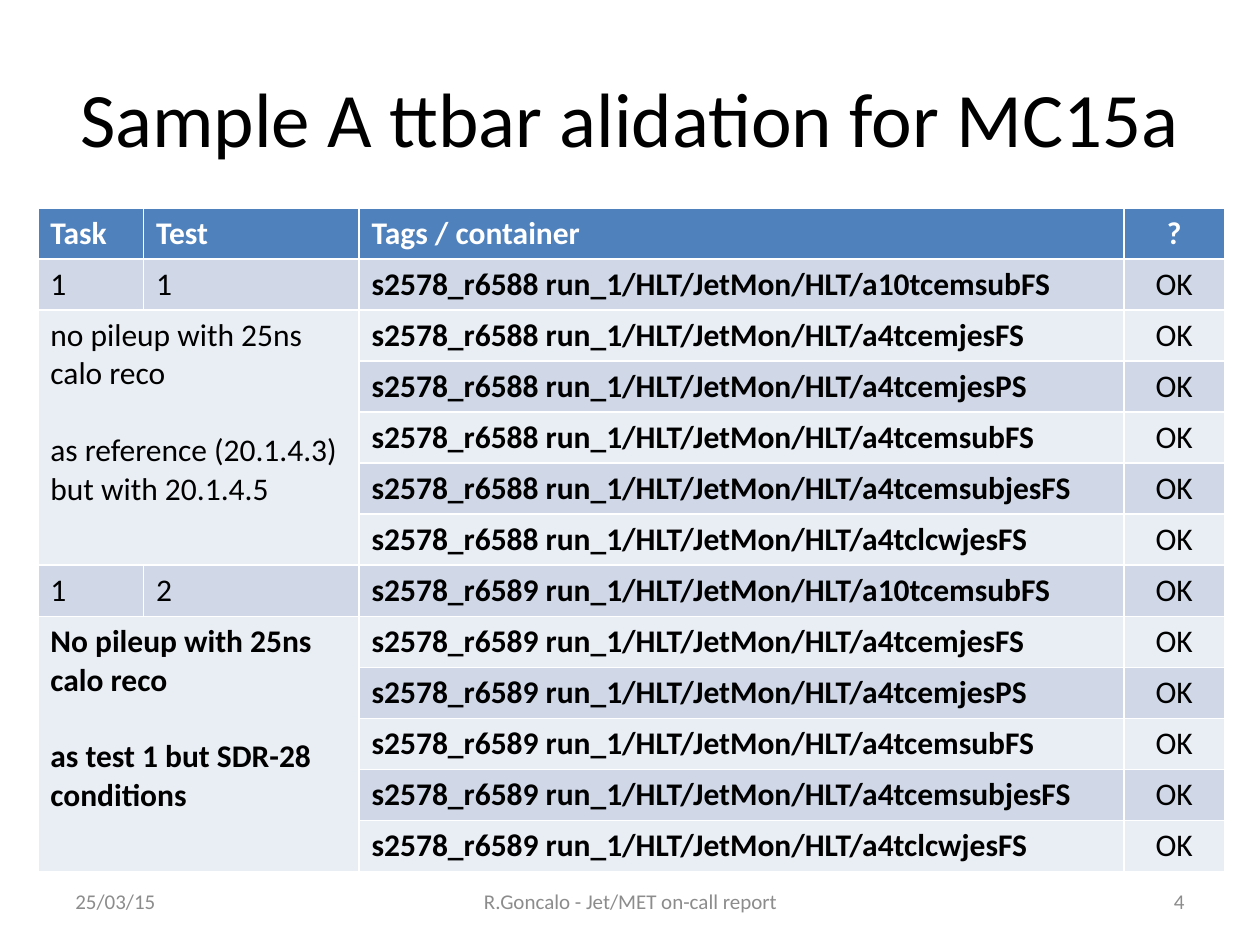
from pptx import Presentation
from pptx.dml.color import RGBColor
from pptx.enum import text
from pptx.util import Inches, Pt

# Content
TITLE = "Sample A ttbar alidation for MC15a"
HEADS = ["Task", "Test", "Tags / container", "?"]
CHAINS = ["a10tcemsubFS", "a4tcemjesFS", "a4tcemjesPS",
          "a4tcemsubFS", "a4tcemsubjesFS", "a4tclcwjesFS"]
TESTS = [
    {"task": "1", "test": "1", "tag": "s2578_r6588", "bold": False,
     "notes": ["no pileup with 25ns calo reco",
               "as reference (20.1.4.3) but with 20.1.4.5"]},
    {"task": "1", "test": "2", "tag": "s2578_r6589", "bold": True,
     "notes": ["No pileup with 25ns calo reco",
               "as test 1 but SDR-28 conditions"]},
]
COLS = [0.84, 1.71, 6.07, 0.8]
ROW = 5.27 / 13
COLORS = {"head": "4F81BD", "dark": "D0D8E8", "light": "E9EDF4",
          "white": "FFFFFF", "black": "000000", "gray": "8C8C8C"}
LEFT, MID, RIGHT = text.PP_ALIGN.LEFT, text.PP_ALIGN.CENTER, text.PP_ALIGN.RIGHT
FOOT = [("25/03/15", 0.5, 2.33, LEFT),
        ("R.Goncalo - Jet/MET on-call report", 3.42, 3.17, MID),
        ("4", 7.17, 2.33, RIGHT)]


def color(name):
    return RGBColor.from_string(COLORS[name])


def write(frame, lines, size, ink="black", bold=False, align=LEFT):
    """Fill a text frame, leaving one line of space between paragraphs."""
    for i, line in enumerate(lines):
        par = frame.add_paragraph() if i else frame.paragraphs[0]
        par.alignment = align
        if i:
            par.space_before = Pt(22)
        run = par.add_run()
        run.text = line
        style = {"name": "Calibri", "size": Pt(size), "bold": bold}
        for key, value in style.items():
            setattr(run.font, key, value)
        run.font.color.rgb = color(ink)


def label(slide, line, box, size, ink, align):
    frame = slide.shapes.add_textbox(*map(Inches, box)).text_frame
    frame.word_wrap = True
    frame.vertical_anchor = text.MSO_ANCHOR.MIDDLE
    write(frame, [line], size, ink, align=align)


deck = Presentation()
deck.slide_width, deck.slide_height = Inches(10), Inches(7.5)
slide = deck.slides.add_slide(deck.slide_layouts[6])

# Title
label(slide, TITLE, (0.5, 0.3, 9, 1.25), 44, "black", MID)

# Table grid and fills
count = 1 + len(TESTS) * len(CHAINS)
grid = slide.shapes.add_table(
    count, len(COLS), Inches(0.3), Inches(1.65),
    Inches(sum(COLS)), Inches(ROW * count)).table
for col, width in zip(grid.columns, COLS):
    col.width = Inches(width)
for r, row in enumerate(grid.rows):
    row.height = Inches(ROW)
    for cell in row.cells:
        cell.fill.solid()
        cell.fill.fore_color.rgb = color(
            "head" if r == 0 else "dark" if r % 2 else "light")

# Header row
for c, head in enumerate(HEADS):
    write(grid.cell(0, c).text_frame, [head], 18, "white", True,
          MID if head == "?" else LEFT)

# One block of rows for each test
for t, test in enumerate(TESTS):
    top = 1 + t * len(CHAINS)
    for c, key in enumerate(["task", "test"]):
        write(grid.cell(top, c).text_frame, [test[key]], 18)
    note = grid.cell(top + 1, 0)
    note.merge(grid.cell(top + len(CHAINS) - 1, 1))
    write(note.text_frame, test["notes"], 18, bold=test["bold"])
    for r, chain in enumerate(CHAINS, top):
        name = f"{test['tag']} run_1/HLT/JetMon/HLT/{chain}"
        write(grid.cell(r, 2).text_frame, [name], 18, bold=True)
        write(grid.cell(r, 3).text_frame, ["OK"], 18, align=MID)

# Footer
for line, left, width, align in FOOT:
    label(slide, line, (left, 6.95, width, 0.4), 12, "gray", align)

deck.save("out.pptx")
